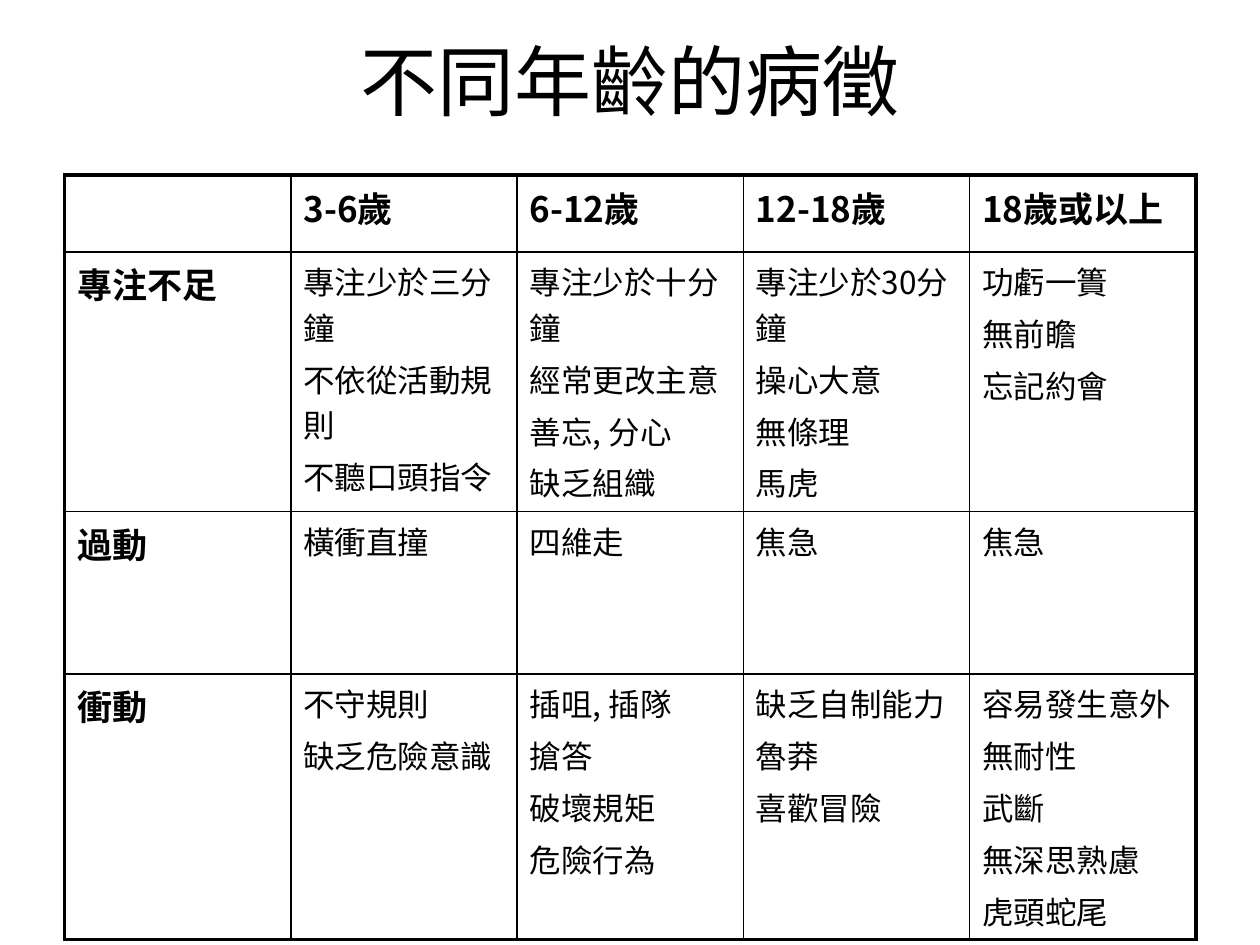
import pptx
import pptx.dml.color
import pptx.enum.text
import pptx.oxml.ns
import pptx.util
from lxml import etree

Pt = pptx.util.Pt
FONT = "Noto Sans CJK SC"
INK = "000000"
INNER_LINE, OUTER_LINE = 0.91, 2.15

TITLE_FORMAT = {"size": Pt(44), "bold": False, "name": FONT}
HEADING_FORMAT = {"size": Pt(20), "bold": True, "name": FONT}
SYMPTOM_FORMAT = {"size": Pt(18), "bold": False, "name": FONT}

COLUMN_WIDTH = 129.3
ROW_HEIGHTS = [43.9, 148.3, 92.9, 151.9]
SYMPTOMS_BY_AGE = [
    ["", "3-6歲", "6-12歲", "12-18歲", "18歲或以上"],
    ["專注不足",
     "專注少於三分鐘\n不依從活動規則\n不聽口頭指令",
     "專注少於十分鐘\n經常更改主意\n善忘, 分心\n缺乏組織",
     "專注少於30分鐘\n操心大意\n無條理\n馬虎",
     "功虧一簣\n無前瞻\n忘記約會"],
    ["過動", "橫衝直撞", "四維走", "焦急", "焦急"],
    ["衝動",
     "不守規則\n缺乏危險意識",
     "插咀, 插隊\n搶答\n破壞規矩\n危險行為",
     "缺乏自制能力\n魯莽\n喜歡冒險",
     "容易發生意外\n無耐性\n武斷\n無深思熟慮\n虎頭蛇尾"],
]


def color(hex_string):
    return pptx.dml.color.RGBColor.from_string(hex_string)


def add_child(parent, tag, **attributes):
    return etree.SubElement(parent, pptx.oxml.ns.qn(tag), attributes)


def write_lines(text_frame, text, font_format):
    """Write one paragraph per line, with the same font for Latin and Chinese."""
    text_frame.text = text
    for index, paragraph in enumerate(text_frame.paragraphs):
        paragraph.space_before = Pt(3.6 if index else 0)
        for run in paragraph.runs:
            for name, value in font_format.items():
                setattr(run.font, name, value)
            run.font.color.rgb = color(INK)
            add_child(run.font._element, "a:ea", typeface=FONT)


def set_borders(cell, outer_sides):
    properties = cell._tc.get_or_add_tcPr()
    for side in "LRTB":
        width = OUTER_LINE if side in outer_sides else INNER_LINE
        line = add_child(properties, f"a:ln{side}", w=str(int(Pt(width))))
        fill = add_child(line, "a:solidFill")
        add_child(fill, "a:srgbClr", val=INK)


def add_title(slide, text):
    title = slide.shapes.title
    place = {"left": 36, "top": 21.6, "width": 648, "height": 90}
    for name, value in place.items():
        setattr(title, name, Pt(value))
    frame = title.text_frame
    frame.word_wrap = True
    frame.auto_size = pptx.enum.text.MSO_AUTO_SIZE.NONE
    frame.vertical_anchor = pptx.enum.text.MSO_ANCHOR.TOP
    write_lines(frame, text, TITLE_FORMAT)
    frame.paragraphs[0].alignment = pptx.enum.text.PP_ALIGN.CENTER
    frame.paragraphs[0].line_spacing = 0.9


def add_symptom_table(slide, rows):
    last_row, last_column = len(rows) - 1, len(rows[0]) - 1
    table = slide.shapes.add_table(
        len(rows), len(rows[0]), Pt(36.9), Pt(100),
        Pt(COLUMN_WIDTH * len(rows[0])), Pt(sum(ROW_HEIGHTS))).table
    table.first_row = table.horz_banding = False
    for column in table.columns:
        column.width = Pt(COLUMN_WIDTH)
    for r, texts in enumerate(rows):
        table.rows[r].height = Pt(ROW_HEIGHTS[r])
        for c, text in enumerate(texts):
            cell = table.cell(r, c)
            is_heading = r == 0 or c == 0
            write_lines(cell.text_frame, text,
                        HEADING_FORMAT if is_heading else SYMPTOM_FORMAT)
            edges = {"L": c == 0, "R": c == last_column,
                     "T": r == 0, "B": r == last_row}
            set_borders(cell, [side for side, outer in edges.items() if outer])
            cell.fill.background()


def main():
    presentation = pptx.Presentation()
    presentation.slide_width, presentation.slide_height = Pt(720), Pt(540)
    slide = presentation.slides.add_slide(presentation.slide_layouts[5])
    add_title(slide, "不同年齡的病徵")
    add_symptom_table(slide, SYMPTOMS_BY_AGE)
    presentation.save("out.pptx")


if __name__ == "__main__":
    main()
